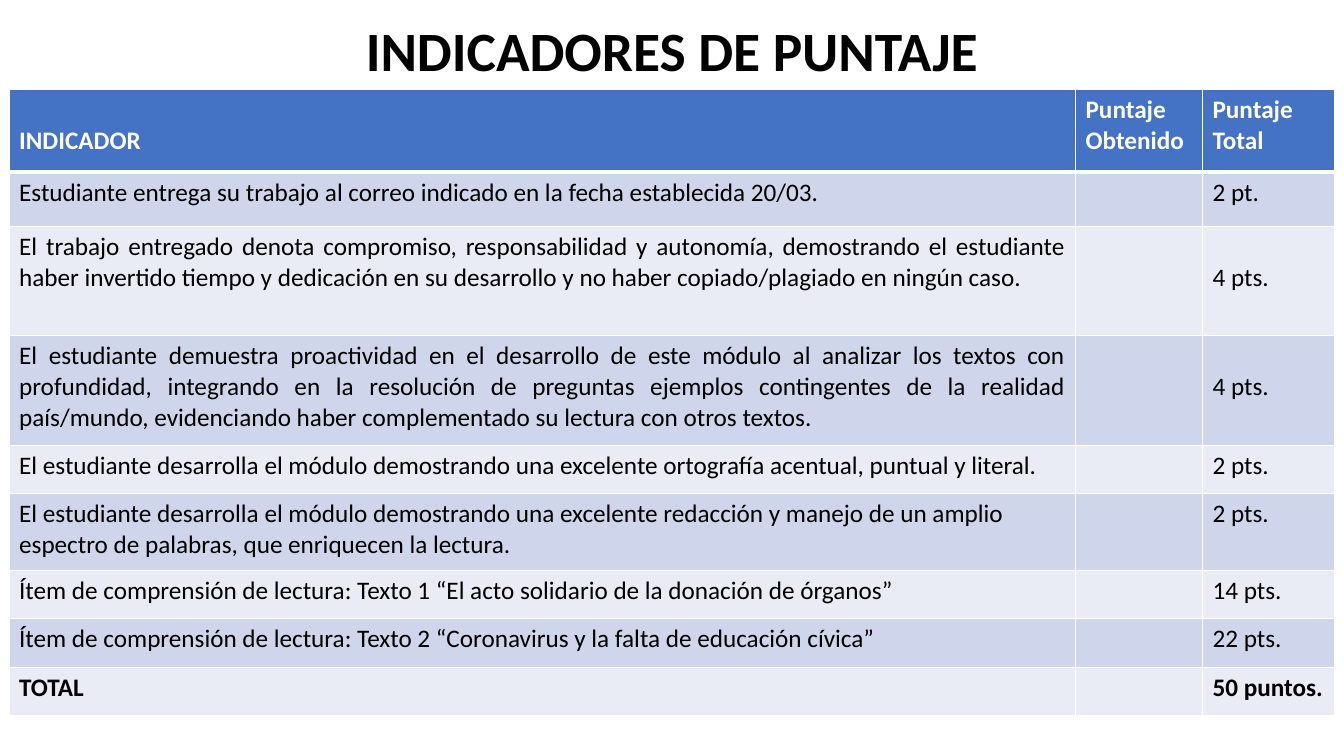
from dataclasses import dataclass
from typing import Any

import lxml.etree
import pptx
import pptx.dml.color
import pptx.enum.text
import pptx.oxml.ns
import pptx.util

Pt = pptx.util.Pt
RGBColor = pptx.dml.color.RGBColor
PP_ALIGN = pptx.enum.text.PP_ALIGN
MSO_ANCHOR = pptx.enum.text.MSO_ANCHOR

BLACK = RGBColor(0x00, 0x00, 0x00)
WHITE = RGBColor(0xFF, 0xFF, 0xFF)
BLUE = RGBColor(0x44, 0x72, 0xC4)
BANDS = (RGBColor(0xE9, 0xEB, 0xF5), RGBColor(0xCF, 0xD5, 0xEA))

COLUMN_WIDTHS = (761.76, 90.72, 94.32)
TOP_MARGIN = 3.6
LINE_HEIGHT = 22


@dataclass(frozen=True)
class ScoreRow:
    height: float
    indicator: str
    total: str
    obtained: str = ""
    bold: bool = False
    justified: bool = False
    indicator_drop: int = 0
    total_drop: int = 0


SCORE_ROWS = (
    ScoreRow(59.04, "INDICADOR", "Puntaje Total", "Puntaje Obtenido", bold=True, indicator_drop=1),
    ScoreRow(38.88, "Estudiante entrega su trabajo al correo indicado en la fecha establecida 20/03.", "2 pt."),
    ScoreRow(
        77.76,
        "El trabajo entregado denota compromiso, responsabilidad y autonomía, demostrando el estudiante "
        "haber invertido tiempo y dedicación en su desarrollo y no haber copiado/plagiado en ningún caso.",
        "4 pts.", justified=True, total_drop=1,
    ),
    ScoreRow(
        78.48,
        "El estudiante demuestra proactividad en el desarrollo de este módulo al analizar los textos con "
        "profundidad, integrando en la resolución de preguntas ejemplos contingentes de la realidad "
        "país/mundo, evidenciando haber complementado su lectura con otros textos.",
        "4 pts.", justified=True, total_drop=1,
    ),
    ScoreRow(
        34.56,
        "El estudiante desarrolla el módulo demostrando una excelente ortografía acentual, puntual y literal.",
        "2 pts.",
    ),
    ScoreRow(
        54.72,
        "El estudiante desarrolla el módulo demostrando una excelente redacción y manejo de un amplio "
        "espectro de palabras, que enriquecen la lectura.",
        "2 pts.",
    ),
    ScoreRow(34.56, "Ítem de comprensión de lectura: Texto 1 “El acto solidario de la donación de órganos”", "14 pts."),
    ScoreRow(34.56, "Ítem de comprensión de lectura: Texto 2 “Coronavirus y la falta de educación cívica”", "22 pts."),
    ScoreRow(34.56, "TOTAL", "50 puntos.", bold=True),
)


def apply_format(target: Any, values: dict[str, Any]) -> None:
    for attribute, value in values.items():
        setattr(target, attribute, value)


def format_font(font: Any, size: float, color: RGBColor, bold: bool) -> None:
    apply_format(font, {"name": "Calibri", "size": Pt(size), "bold": bold})
    font.color.rgb = color


def add_borders(cell: Any, widths: dict[str, float]) -> None:
    qn = pptx.oxml.ns.qn
    properties = cell._tc.get_or_add_tcPr()
    for side, width in widths.items():
        border = lxml.etree.SubElement(properties, qn(f"a:{side}"), w=str(Pt(width)))
        fill = lxml.etree.SubElement(border, qn("a:solidFill"))
        lxml.etree.SubElement(fill, qn("a:srgbClr"), val=str(WHITE))


def fill_cell(cell: Any, text: str, drop: int, row_index: int, row: ScoreRow, justified: bool) -> None:
    header = row_index == 0
    add_borders(cell, {"lnL": 1, "lnR": 1, "lnT": 3 if row_index == 1 else 1, "lnB": 3 if header else 1})
    cell.fill.solid()
    cell.fill.fore_color.rgb = BLUE if header else BANDS[row_index % 2]
    apply_format(cell, {
        "text": text,
        "vertical_anchor": MSO_ANCHOR.TOP,
        "margin_top": Pt(TOP_MARGIN + drop * LINE_HEIGHT),
    })
    paragraph = cell.text_frame.paragraphs[0]
    paragraph.alignment = PP_ALIGN.JUSTIFY if justified else PP_ALIGN.LEFT
    format_font(paragraph.font, 18, WHITE if header else BLACK, row.bold)


def add_title(slide: Any) -> None:
    title = slide.shapes.title
    apply_format(title, {"left": Pt(66), "top": Pt(12), "width": Pt(828), "height": Pt(52)})
    apply_format(title.text_frame, {
        "text": "INDICADORES DE PUNTAJE",
        "vertical_anchor": MSO_ANCHOR.MIDDLE,
        "word_wrap": True,
        "auto_size": pptx.enum.text.MSO_AUTO_SIZE.NONE,
    })
    heading = title.text_frame.paragraphs[0]
    apply_format(heading, {"alignment": PP_ALIGN.CENTER, "line_spacing": 0.9})
    format_font(heading.runs[0].font, 39.6, BLACK, True)


def add_score_table(slide: Any) -> None:
    scores = slide.shapes.add_table(
        len(SCORE_ROWS), len(COLUMN_WIDTHS), Pt(6.48), Pt(64.08),
        Pt(sum(COLUMN_WIDTHS)), Pt(sum(row.height for row in SCORE_ROWS)),
    ).table
    for column, width in zip(scores.columns, COLUMN_WIDTHS):
        column.width = Pt(width)
    for row_index, row in enumerate(SCORE_ROWS):
        scores.rows[row_index].height = Pt(row.height)
        contents = ((row.indicator, row.indicator_drop), (row.obtained, 0), (row.total, row.total_drop))
        for column_index, (text, drop) in enumerate(contents):
            justified = row.justified and column_index == 0
            fill_cell(scores.cell(row_index, column_index), text, drop, row_index, row, justified)


def main() -> None:
    presentation = pptx.Presentation()
    apply_format(presentation, {"slide_width": Pt(960), "slide_height": Pt(540)})
    slide = presentation.slides.add_slide(presentation.slide_layouts.get_by_name("Title Only"))
    add_title(slide)
    add_score_table(slide)
    presentation.save("out.pptx")


if __name__ == "__main__":
    main()
